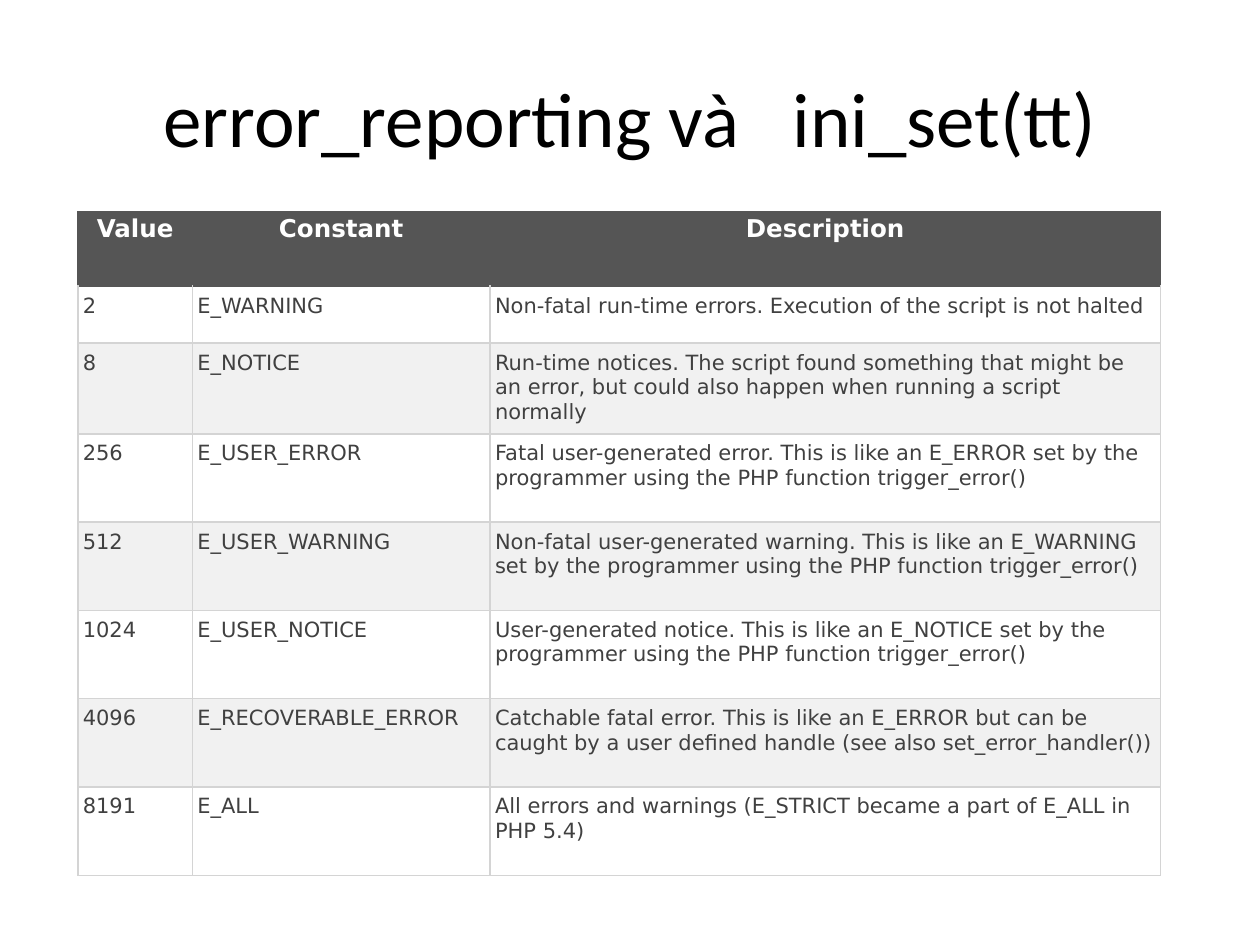
from dataclasses import dataclass

from lxml.etree import SubElement as Sub
from pptx import Presentation as Deck
from pptx.dml.color import RGBColor as Rgb
from pptx.enum.text import MSO_ANCHOR as Anchor, PP_ALIGN as Align
from pptx.oxml.ns import qn
from pptx.util import Cm, Pt


@dataclass(frozen=True)
class Theme:
    """Colours, fonts and type sizes."""

    black: str = "000000"
    white: str = "FFFFFF"
    head: str = "555555"
    body: str = "404040"
    band: str = "F1F1F1"
    rule: str = "D4D4D4"
    title_font: str = "Calibri"
    grid_font: str = "DejaVu Sans"
    title_size: int = 44
    head_size: int = 14
    body_size: int = 12


class Page:
    """Style and current slide, with one method per element."""

    def __init__(self, slide, theme):
        self.slide = slide
        self.theme = theme

    def run(self, para, text, font, size, color, bold=False, gap=0):
        """Add one run; gap widens its character spacing in points."""
        run = para.add_run()
        run.text = text
        run.font.name = font
        run.font.size = Pt(size)
        run.font.bold = bold
        run.font.color.rgb = Rgb.from_string(color)
        if gap:
            run.font._element.set("spc", str(gap * 100))

    def title(self, parts, left, top, width, height):
        """Add the centred title from pairs of text and gap."""
        look = self.theme
        frame = self.slide.shapes.add_textbox(
            Cm(left), Cm(top), Cm(width), Cm(height)).text_frame
        frame.word_wrap = True
        frame.vertical_anchor = Anchor.MIDDLE
        para = frame.paragraphs[0]
        para.alignment = Align.CENTER
        for text, gap in parts:
            self.run(para, text, look.title_font, look.title_size, look.black, gap=gap)

    def edge(self, cell, side, color):
        """Draw one cell border."""
        line = Sub(cell._tc.get_or_add_tcPr(), qn(f"a:ln{side}"), w=str(Pt(1)))
        fill = Sub(line, qn("a:solidFill"))
        Sub(fill, qn("a:srgbClr"), val=color)

    def cell(self, cell, text, row):
        """Style and fill one cell according to its row."""
        look = self.theme
        head = row == 0
        pad_x, pad_y = (0.05, 0.05) if head else (0.1, 0.15)
        cell.margin_left = cell.margin_right = Cm(pad_x)
        cell.margin_top = cell.margin_bottom = Cm(pad_y)
        cell.vertical_anchor = Anchor.TOP
        for side in "LRTB":
            dark = head or (row == 1 and side == "T")
            self.edge(cell, side, look.head if dark else look.rule)
        cell.fill.solid()
        back = look.head if head else look.white if row % 2 else look.band
        cell.fill.fore_color.rgb = Rgb.from_string(back)
        para = cell.text_frame.paragraphs[0]
        para.alignment = Align.CENTER if head else Align.LEFT
        size = look.head_size if head else look.body_size
        color = look.white if head else look.body
        self.run(para, text, look.grid_font, size, color, bold=head)

    def table(self, data, left, top, widths, heights):
        """Add a banded table with a dark header."""
        grid = self.slide.shapes.add_table(
            len(data), len(widths), Cm(left), Cm(top),
            Cm(sum(widths)), Cm(sum(heights))).table
        grid.horz_banding = False
        for col, width in zip(grid.columns, widths):
            col.width = Cm(width)
        for row, height in zip(grid.rows, heights):
            row.height = Cm(height)
        for i, texts in enumerate(data):
            for j, text in enumerate(texts):
                self.cell(grid.cell(i, j), text, i)


TITLE = [("error_reporting và", 0), (" ", 20), ("ini_set(tt)", 0)]
LEVELS = [
    ("Value", "Constant", "Description"),
    ("2", "E_WARNING",
     "Non-fatal run-time errors. Execution of the script is not halted"),
    ("8", "E_NOTICE",
     "Run-time notices. The script found something that might be an error, "
     "but could also happen when running a script normally"),
    ("256", "E_USER_ERROR",
     "Fatal user-generated error. This is like an E_ERROR set by the "
     "programmer using the PHP function trigger_error()"),
    ("512", "E_USER_WARNING",
     "Non-fatal user-generated warning. This is like an E_WARNING set by the "
     "programmer using the PHP function trigger_error()"),
    ("1024", "E_USER_NOTICE",
     "User-generated notice. This is like an E_NOTICE set by the "
     "programmer using the PHP function trigger_error()"),
    ("4096", "E_RECOVERABLE_ERROR",
     "Catchable fatal error. This is like an E_ERROR but can be caught by a "
     "user defined handle (see also set_error_handler())"),
    ("8191", "E_ALL",
     "All errors and warnings (E_STRICT became a part of E_ALL in PHP 5.4)"),
]


def main():
    """Build and save the slide."""
    deck = Deck()
    deck.slide_width, deck.slide_height = Cm(25.4), Cm(19.05)
    page = Page(deck.slides.add_slide(deck.slide_layouts[6]), Theme())
    page.title(TITLE, 1.27, 0.76, 22.86, 3.18)
    page.table(LEVELS, 1.57, 4.27, [2.31, 6, 13.51], [1.5, 1.15] + [1.78] * 6)
    deck.save("out.pptx")


if __name__ == "__main__":
    main()
